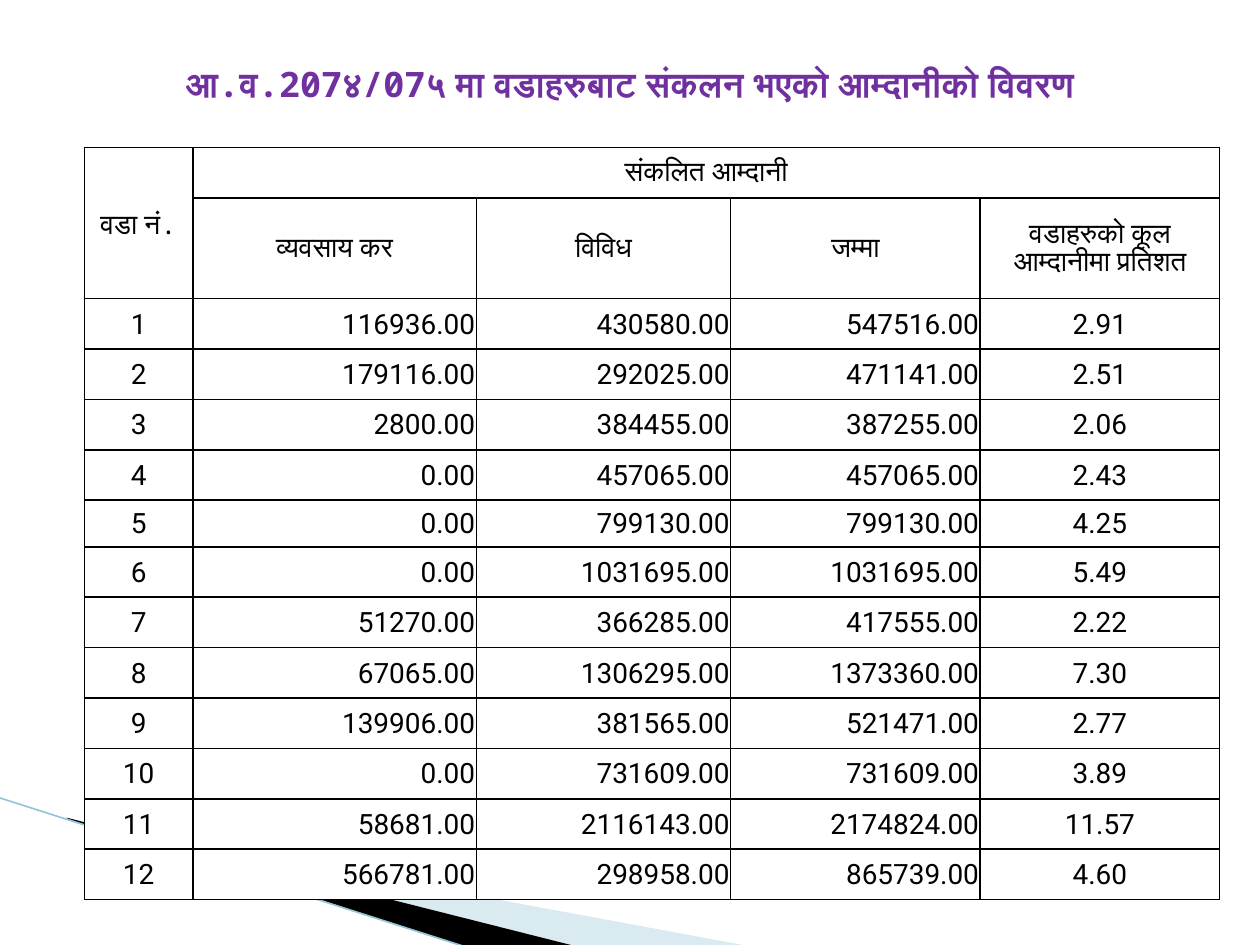
import pptx
import pptx.dml.color
import pptx.enum.shapes
import pptx.enum.text
import pptx.oxml
import pptx.oxml.ns
import pptx.util

Inches, Pt = pptx.util.Inches, pptx.util.Pt
ALIGN = pptx.enum.text.PP_ALIGN
MIDDLE = pptx.enum.text.MSO_ANCHOR.MIDDLE

TITLE = "आ.व.207४/07५ मा वडाहरुबाट संकलन भएको आम्दानीको विवरण"
WARD_HEADING = "वडा नं."
INCOME_HEADING = "संकलित आम्दानी"
INCOME_PARTS = ["व्यवसाय कर", "विविध", "जम्मा", "वडाहरुको कूल आम्दानीमा प्रतिशत"]
# Business tax, miscellaneous income, share of all wards in percent
WARDS = [
    (116936, 430580, 2.91),
    (179116, 292025, 2.51),
    (2800, 384455, 2.06),
    (0, 457065, 2.43),
    (0, 799130, 4.25),
    (0, 1031695, 5.49),
    (51270, 366285, 2.22),
    (67065, 1306295, 7.30),
    (139906, 381565, 2.77),
    (0, 731609, 3.89),
    (58681, 2116143, 11.57),
    (566781, 298958, 4.60),
]

THEME = {
    "title": {"name": "Noto Sans Mono", "size": Pt(20), "bold": True, "color": "7030A0"},
    "heading": {"name": "Noto Sans Mono", "size": Pt(16), "bold": False, "color": "000000"},
    "figure": {"name": "Roboto", "size": Pt(16), "bold": False, "color": "000000"},
    "paper": "FFFFFF", "rule": "000000", "band": "000000",
    "pale_band": "A0CBDC", "edge": "97C5D8",
}
PALE_BAND_OPACITY = 40
TITLE_BOX = (0.5, 0.33, 9, 0.67)
TABLE_ORIGIN = (0.67, 1.17)
COLUMNS = [0.86, 2.25, 2.02, 1.98, 1.9]
ROW, HEADING_ROW, SHORT_ROW, SHORT_WARD = 0.4, 0.8, 0.37, 5
CELL_MARGINS = {"margin_left": 0.01, "margin_right": 0.01, "margin_top": 0.01, "margin_bottom": 0}
BANDS = [
    ("pale_band", [(0.55, 6.51), (5.95, 7.51), (4.56, 7.51), (0.55, 6.5)]),
    ("band", [(0.53, 6.49), (4.57, 7.51), (3.72, 7.52), (0.54, 6.5)]),
]
EDGE = (-0.01, 6.33, 3.71, 7.52)


def rgb(name):
    return pptx.dml.color.RGBColor.from_string(THEME.get(name, name))


def write(frame, text, style, align):
    frame.text = text
    paragraph = frame.paragraphs[0]
    paragraph.alignment = align
    font = paragraph.runs[0].font
    for key, value in THEME[style].items():
        if key == "color":
            font.color.rgb = rgb(value)
        else:
            setattr(font, key, value)


def add_bands(slide):
    for color, corners in BANDS:
        points = [(Inches(x), Inches(y)) for x, y in corners]
        builder = slide.shapes.build_freeform(*points[0])
        builder.add_line_segments(points[1:])
        band = builder.convert_to_shape()
        band.shadow.inherit = False
        band.line.fill.background()
        band.fill.solid()
        band.fill.fore_color.rgb = rgb(color)
        if color == "pale_band":
            tint = band.fill._xPr.find(".//" + pptx.oxml.ns.qn("a:srgbClr"))
            alpha = pptx.oxml.parse_xml(f'<a:alpha {pptx.oxml.ns.nsdecls("a")} val="{PALE_BAND_OPACITY * 1000}"/>')
            tint.append(alpha)
    edge = slide.shapes.add_connector(pptx.enum.shapes.MSO_CONNECTOR.STRAIGHT, *map(Inches, EDGE))
    edge.line.color.rgb = rgb("edge")
    edge.line.width = Pt(0.95)
    edge._element.spPr.append(pptx.oxml.parse_xml(f'<a:effectLst {pptx.oxml.ns.nsdecls("a")}/>'))


def rule_cell(cell):
    """Draw a one-point rule on all four sides; must come before the fill."""
    properties = cell._tc.get_or_add_tcPr()
    for side in "LRTB":
        properties.append(pptx.oxml.parse_xml(
            f'<a:ln{side} {pptx.oxml.ns.nsdecls("a")} w="{Pt(1)}"><a:solidFill>'
            f'<a:srgbClr val="{THEME["rule"]}"/></a:solidFill></a:ln{side}>'))


def add_income_table(slide):
    heights = [ROW, HEADING_ROW] + [
        SHORT_ROW if ward == SHORT_WARD else ROW for ward in range(1, len(WARDS) + 1)]
    box = (*TABLE_ORIGIN, sum(COLUMNS), sum(heights))
    table = slide.shapes.add_table(len(heights), len(COLUMNS), *map(Inches, box)).table
    table.first_row = table.horz_banding = False
    for column, width in zip(table.columns, COLUMNS):
        column.width = Inches(width)
    for row, height in zip(table.rows, heights):
        row.height = Inches(height)
    for cell in table.iter_cells():
        rule_cell(cell)
        cell.fill.solid()
        cell.fill.fore_color.rgb = rgb("paper")
        cell.vertical_anchor = MIDDLE
        for side, margin in CELL_MARGINS.items():
            setattr(cell, side, Inches(margin))

    table.cell(0, 0).merge(table.cell(1, 0))
    table.cell(0, 1).merge(table.cell(0, len(COLUMNS) - 1))
    headings = [(0, 0, WARD_HEADING), (0, 1, INCOME_HEADING)]
    headings += [(1, column, part) for column, part in enumerate(INCOME_PARTS, 1)]
    for row, column, heading in headings:
        write(table.cell(row, column).text_frame, heading, "heading", ALIGN.CENTER)

    aligns = [ALIGN.CENTER, ALIGN.RIGHT, ALIGN.RIGHT, ALIGN.RIGHT, ALIGN.CENTER]
    for ward, (tax, other, share) in enumerate(WARDS, 1):
        figures = [str(ward)] + [f"{value:.2f}" for value in (tax, other, tax + other, share)]
        for column, (figure, align) in enumerate(zip(figures, aligns)):
            write(table.cell(ward + 1, column).text_frame, figure, "figure", align)


def main():
    deck = pptx.Presentation()
    deck.slide_width, deck.slide_height = Inches(10), Inches(7.5)
    slide = deck.slides.add_slide(deck.slide_layouts[5])
    add_bands(slide)
    title = slide.shapes.title
    title.left, title.top, title.width, title.height = map(Inches, TITLE_BOX)
    title.text_frame.vertical_anchor = MIDDLE
    write(title.text_frame, TITLE, "title", ALIGN.CENTER)
    add_income_table(slide)
    deck.save("out.pptx")


if __name__ == "__main__":
    main()
